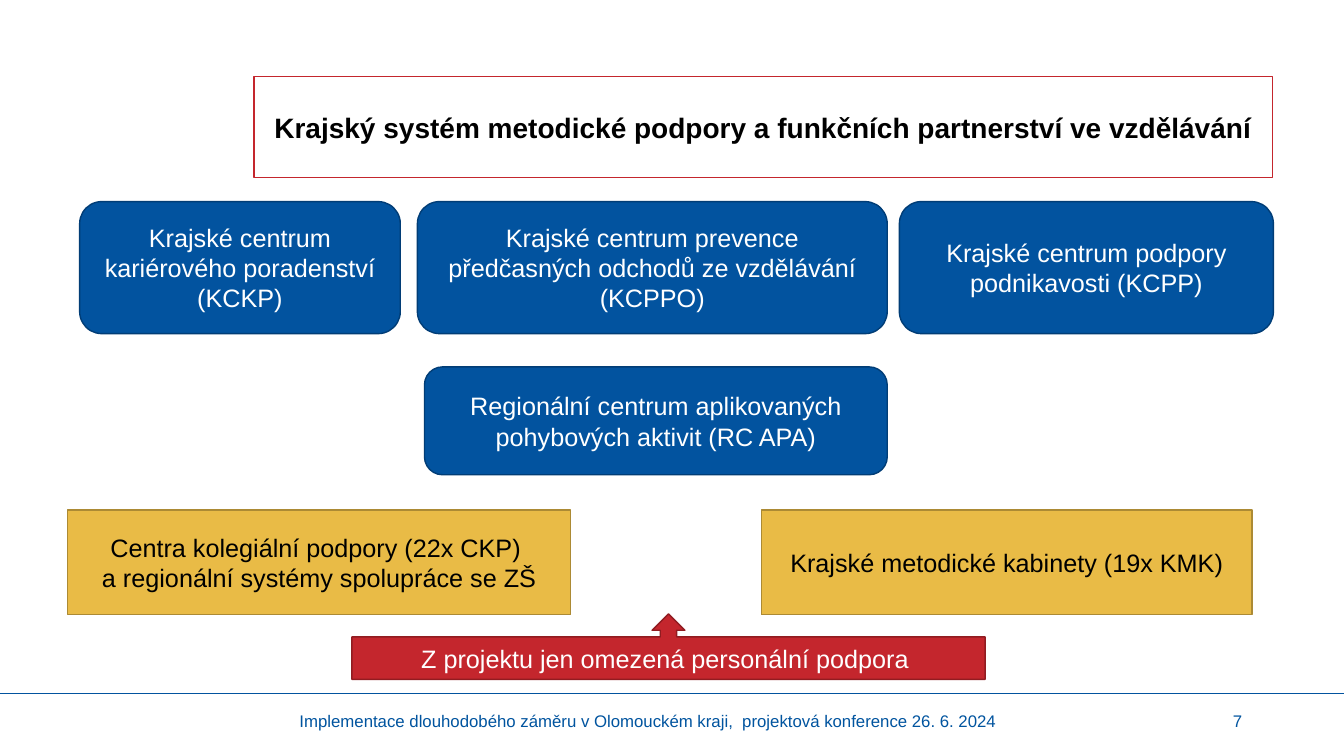
from dataclasses import dataclass

from lxml import etree
from pptx import Presentation
from pptx.dml.color import RGBColor
from pptx.enum import shapes, text
from pptx.oxml.ns import qn
from pptx.util import Inches, Pt

WHITE = RGBColor(0xFF, 0xFF, 0xFF)
BLACK = RGBColor(0, 0, 0)
BLUE = RGBColor(0x02, 0x53, 0x9F)
DARK_BLUE = RGBColor(0x01, 0x3D, 0x76)
FOOTER_BLUE = RGBColor(0x00, 0x54, 0x9F)
GOLD = RGBColor(0xE9, 0xBB, 0x46)
DARK_GOLD = RGBColor(0xAC, 0x8A, 0x34)
RED = RGBColor(0xC4, 0x26, 0x2D)
DARK_RED = RGBColor(0x91, 0x1C, 0x21)

SLIDE_W, SLIDE_H = 13.33, 7.5
CENTRE_TOP, CENTRE_H = 2, 1.31
SUPPORT_TOP, SUPPORT_H = 5.06, 1.04
FOOTER_TOP, FOOTER_H = 6.95, 0.4
RULE_Y = 6.88


@dataclass(frozen=True)
class Style:
    geometry: shapes.MSO_SHAPE
    fill: RGBColor
    line: RGBColor
    font: RGBColor


@dataclass(frozen=True)
class Box:
    style: Style
    left: float
    top: float
    width: float
    height: float
    label: str


CENTRE = Style(shapes.MSO_SHAPE.ROUNDED_RECTANGLE, BLUE, DARK_BLUE, WHITE)
SUPPORT = Style(shapes.MSO_SHAPE.RECTANGLE, GOLD, DARK_GOLD, BLACK)
NOTE = Style(shapes.MSO_SHAPE.UP_ARROW_CALLOUT, RED, DARK_RED, WHITE)

BOXES = [
    Box(CENTRE, 0.79, CENTRE_TOP, 3.18, CENTRE_H,
        "Krajské centrum kariérového poradenství (KCKP)"),
    Box(CENTRE, 4.14, CENTRE_TOP, 4.66, CENTRE_H,
        "Krajské centrum prevence předčasných odchodů ze vzdělávání (KCPPO)"),
    Box(CENTRE, 8.92, CENTRE_TOP, 3.71, CENTRE_H,
        "Krajské centrum podpory podnikavosti (KCPP)"),
    Box(CENTRE, 4.21, 3.64, 4.59, 1.07,
        "Regionální centrum aplikovaných pohybových aktivit (RC APA)"),
    Box(SUPPORT, 0.67, SUPPORT_TOP, 4.99, SUPPORT_H,
        "Centra kolegiální podpory (22x CKP) \na regionální systémy spolupráce se ZŠ"),
    Box(SUPPORT, 7.55, SUPPORT_TOP, 4.87, SUPPORT_H,
        "Krajské metodické kabinety (19x KMK)"),
    Box(NOTE, 3.49, 6.09, 6.28, 0.65,
        "Z projektu jen omezená personální podpora "),
]


def write(sp, label: str, *, size: float = 18, color: RGBColor = BLACK,
          bold: bool = False, align=text.PP_ALIGN.CENTER) -> None:
    tf = sp.text_frame
    tf.text = label
    tf.word_wrap = True
    tf.auto_size = text.MSO_AUTO_SIZE.NONE
    tf.vertical_anchor = text.MSO_ANCHOR.MIDDLE
    for p in tf.paragraphs:
        p.alignment = align
        p.line_spacing = 1
        for r in p.runs:
            r.font.name = "Arial"
            r.font.size = Pt(size)
            r.font.bold = bold
            r.font.color.rgb = color


def paint(sp, fill: RGBColor, line: RGBColor) -> None:
    sp.fill.solid()
    sp.fill.fore_color.rgb = fill
    sp.line.color.rgb = line
    sp.line.width = Pt(1)


def add_title(s) -> None:
    sp = s.shapes.title
    sp.left, sp.top = Inches(2.52), Inches(0.76)
    sp.width, sp.height = Inches(10.1), Inches(1)
    paint(sp, WHITE, RED)
    write(sp, "Krajský systém metodické podpory a funkčních partnerství ve vzdělávání",
          size=20, bold=True)


def add_box(s, box: Box) -> None:
    sp = s.shapes.add_shape(box.style.geometry, Inches(box.left), Inches(box.top),
                            Inches(box.width), Inches(box.height))
    sp.shadow.inherit = False
    paint(sp, box.style.fill, box.style.line)
    write(sp, box.label, color=box.style.font)


def add_footer(s, left: float, width: float, label: str, align) -> None:
    sp = s.shapes.add_textbox(Inches(left), Inches(FOOTER_TOP),
                              Inches(width), Inches(FOOTER_H))
    write(sp, label, size=12, color=FOOTER_BLUE, align=align)


def add_rule(s) -> None:
    rule = s.shapes.add_connector(shapes.MSO_CONNECTOR.STRAIGHT, 0, Inches(RULE_Y),
                                  Inches(SLIDE_W), Inches(RULE_Y))
    rule.line.color.rgb = BLUE
    rule.line.width = Pt(1)
    etree.SubElement(rule._element.spPr, qn("a:effectLst"))


def main() -> None:
    prs = Presentation()
    prs.slide_width, prs.slide_height = Inches(SLIDE_W), Inches(SLIDE_H)
    s = prs.slides.add_slide(prs.slide_layouts[5])
    add_title(s)
    add_rule(s)
    add_footer(s, 2.29, 8.28,
               "Implementace dlouhodobého záměru v Olomouckém kraji,  "
               "projektová konference 26. 6. 2024", text.PP_ALIGN.CENTER)
    add_footer(s, 9.42, 3, "7", text.PP_ALIGN.RIGHT)
    for box in BOXES:
        add_box(s, box)
    prs.save("out.pptx")


if __name__ == "__main__":
    main()
